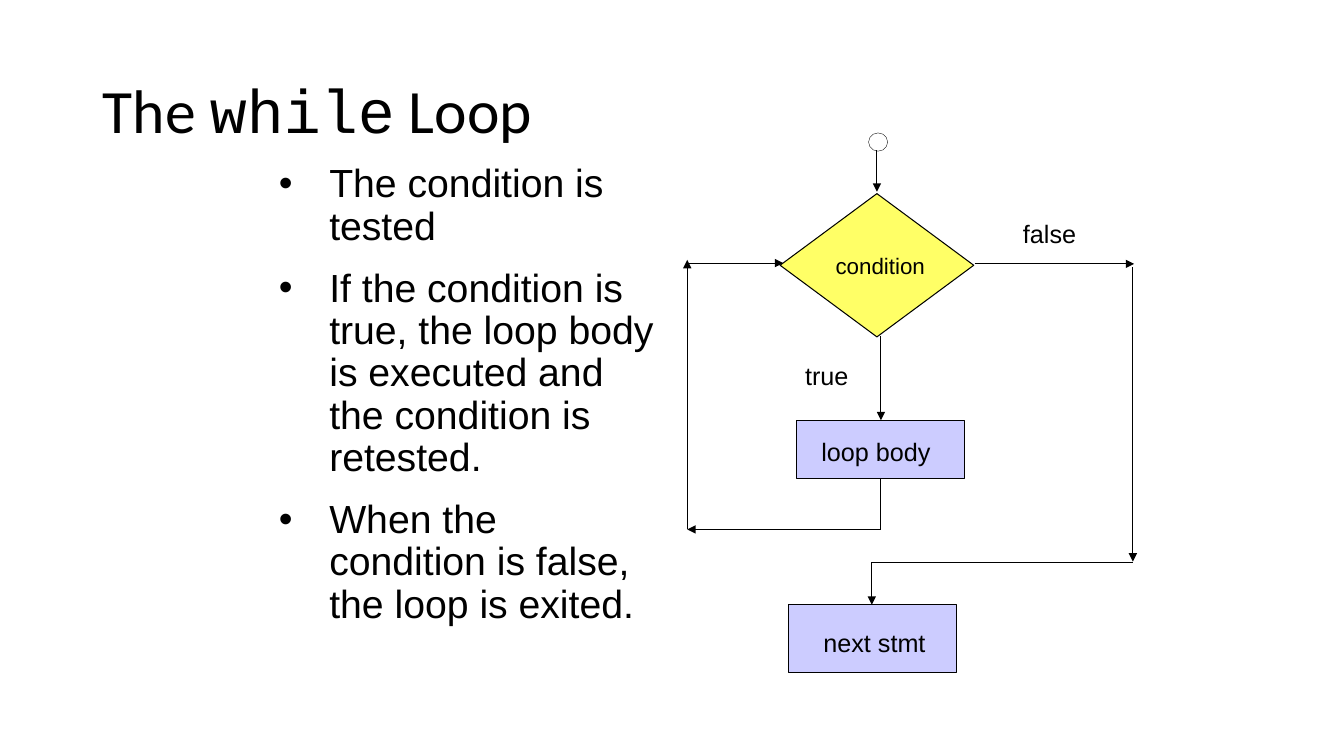
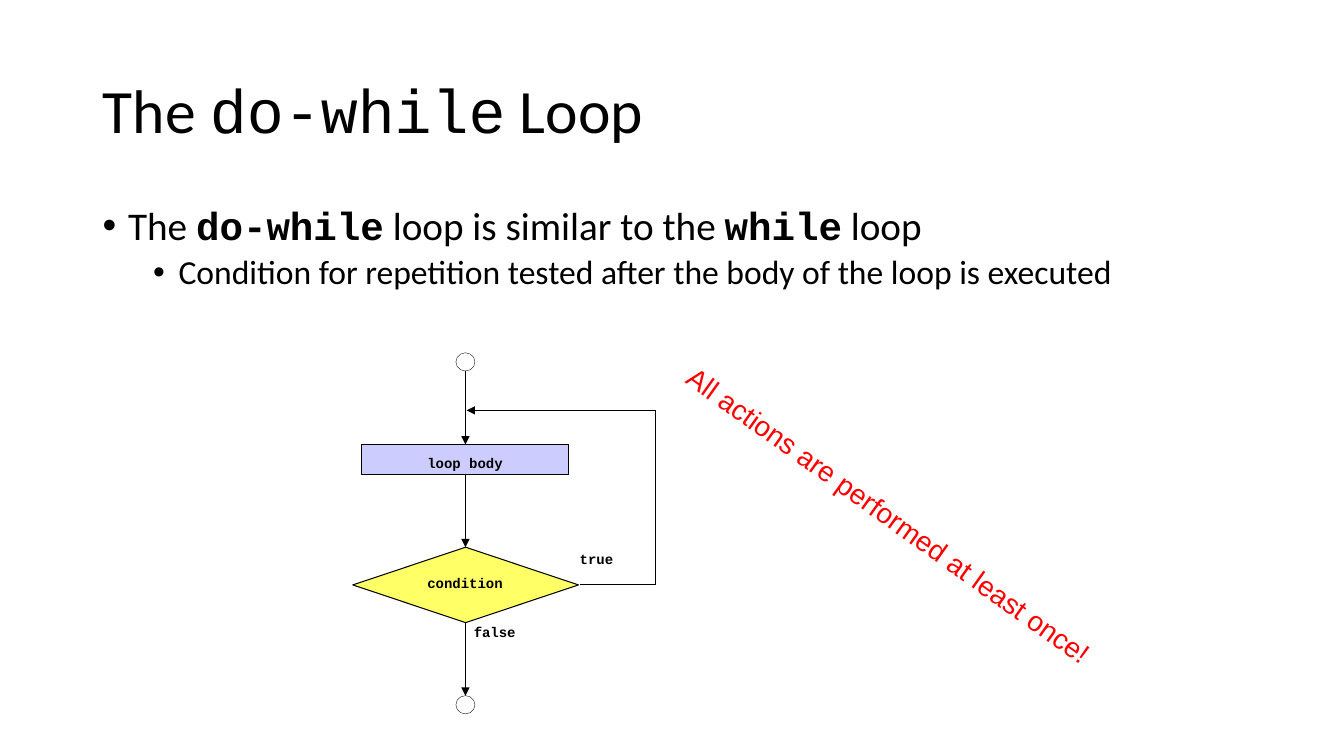
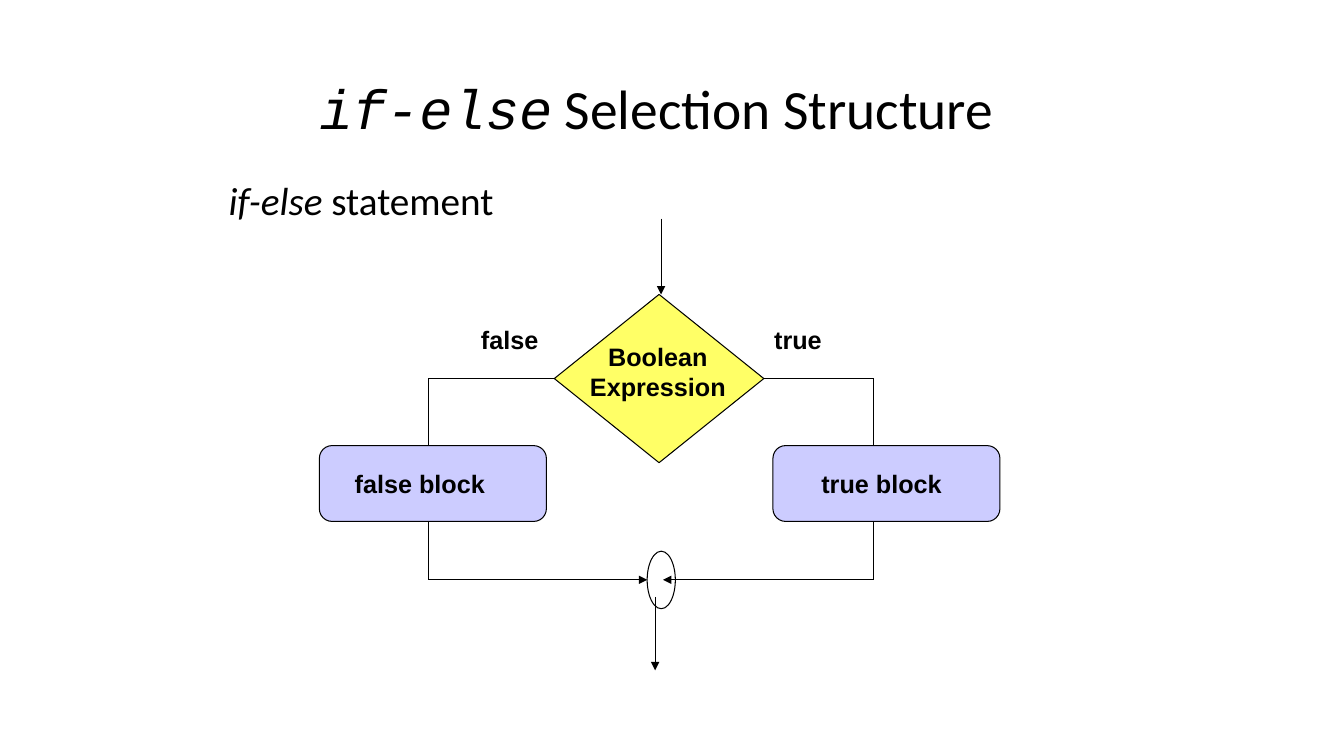
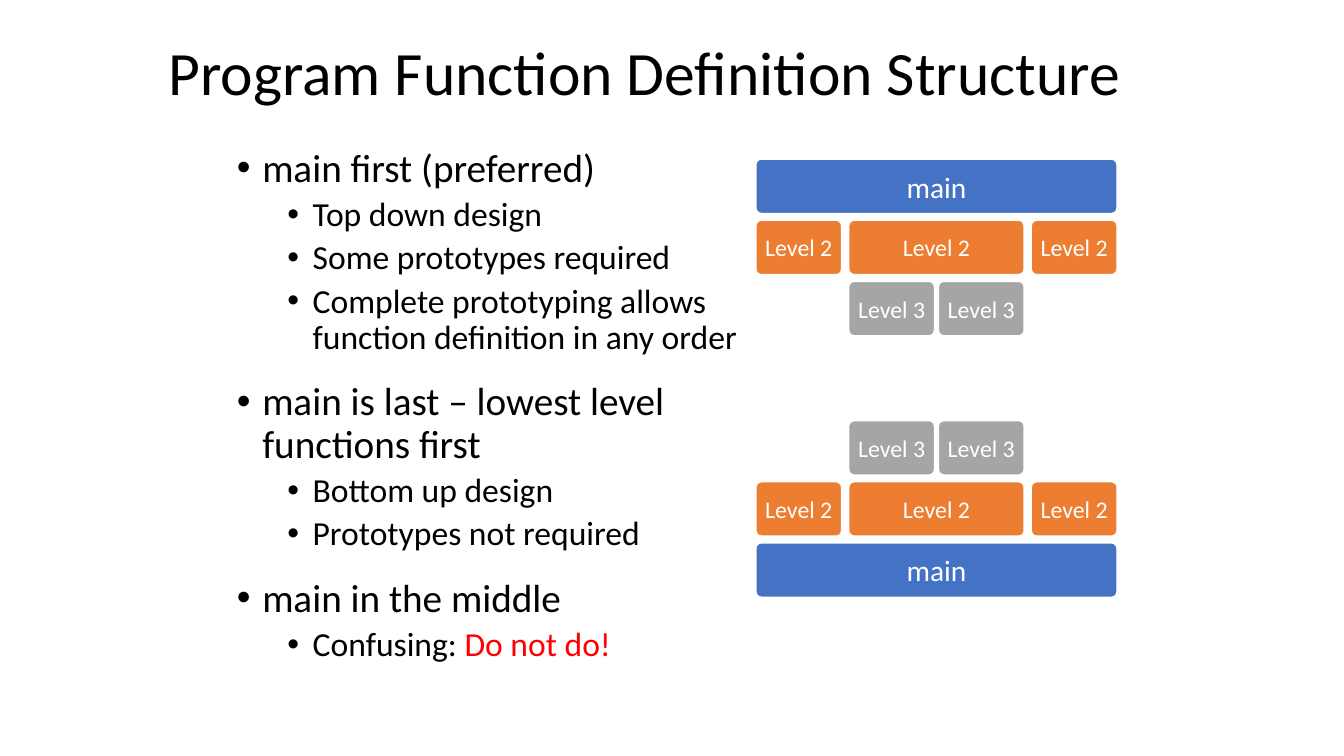
import dataclasses
import itertools

import lxml.etree
import pptx
import pptx.dml.color
import pptx.enum.shapes
import pptx.enum.text
import pptx.oxml.ns
import pptx.util

Cm, Pt = pptx.util.Cm, pptx.util.Pt
Kind = pptx.enum.shapes.MSO_SHAPE
Align = pptx.enum.text.PP_ALIGN
Anchor = pptx.enum.text.MSO_ANCHOR
qn = pptx.oxml.ns.qn


@dataclasses.dataclass(frozen=True)
class Theme:
    ink: str = "000000"
    white: str = "FFFFFF"
    red: str = "FF0000"
    test: str = "FFFF66"
    step: str = "CCCCFF"
    blue: str = "4472C4"
    orange: str = "ED7D31"
    gray: str = "A5A5A5"
    main: str = "Calibri"
    sans: str = "Arial"
    code: str = "Courier New"
    head: float = 44
    lower: float = 39.6
    body: tuple = (28, 24)
    note: float = 20
    label: float = 18
    small: float = 16
    tiny: float = 10
    block: tuple = (21, 17)
    thin: float = 0.25
    line: float = 0.75
    leading: float = 0.9


def tint(color):
    return pptx.dml.color.RGBColor.from_string(color)


class Deck:
    def __init__(self, theme):
        self.theme = theme
        self.show = pptx.Presentation()
        self.show.slide_width, self.show.slide_height = Cm(33.87), Cm(19.05)
        self.page = None

    def font(self, run, face, size, color=None, bold=False, ital=False):
        font = run.font
        font.name, font.size, font.bold, font.italic = face, Pt(size), bold, ital
        font.color.rgb = tint(color or self.theme.ink)

    def runs(self, para, text, mark=None, **style):
        """Parts of the text between backticks get the style in mark as well."""
        for i, part in enumerate(text.split("`")):
            if part:
                run = para.add_run()
                run.text = part
                self.font(run, **{**style, **(mark or {} if i % 2 else {})})

    def slide(self, title, at=(2.34, 1.02, 29.21, 3.68), size=None, mark=None):
        self.page = self.show.slides.add_slide(self.show.slide_layouts[5])
        box = self.page.shapes.title
        box.left, box.top, box.width, box.height = map(Cm, at)
        frame = box.text_frame
        frame.auto_size = pptx.enum.text.MSO_AUTO_SIZE.NONE
        frame.vertical_anchor = Anchor.MIDDLE
        para = frame.paragraphs[0]
        para.alignment, para.line_spacing = Align.LEFT, self.theme.leading
        self.runs(para, title, mark, face=self.theme.main,
                  size=size or self.theme.head)

    def bullets(self, items, at, face=None, inset=0.64, gap=18, mark=None, dot="•"):
        """Each item is a pair of level and text; gap goes above later top items."""
        frame = self.page.shapes.add_textbox(*map(Cm, at)).text_frame
        frame.word_wrap = True
        for i, (level, text) in enumerate(items):
            para = frame.add_paragraph() if i else frame.paragraphs[0]
            para.level, para.line_spacing = level, self.theme.leading
            para.space_before = Pt(5 if level else gap if i else 10)
            self.runs(para, text, mark, face=face or self.theme.main,
                      size=self.theme.body[level])
            if dot:
                props = para._p.get_or_add_pPr()
                props.set("marL", str(Cm(inset + 1.27 * level)))
                props.set("indent", str(-Cm(inset)))
                lxml.etree.SubElement(props, qn("a:buFont"), typeface=self.theme.sans)
                lxml.etree.SubElement(props, qn("a:buChar"), char=dot)

    def label(self, text, at, size=None, face=None, center=False, turn=0, **style):
        box = self.page.shapes.add_textbox(*map(Cm, at))
        box.rotation = turn
        frame = box.text_frame
        frame.word_wrap = True
        self.fill(frame, text, face or self.theme.sans, size or self.theme.label,
                  Align.CENTER if center else Align.LEFT, **style)

    def fill(self, frame, text, face, size, align, **style):
        """Put text without margins in a frame."""
        frame.margin_left = frame.margin_right = 0
        frame.margin_top = frame.margin_bottom = 0
        frame.text = text
        for para in frame.paragraphs:
            para.alignment = align
            for run in para.runs:
                self.font(run, face, size, **style)

    def node(self, kind, at, fill=None, width=None, edge=None, bend=None):
        shape = self.page.shapes.add_shape(kind, *map(Cm, at))
        shape.shadow.inherit = False
        if fill:
            shape.fill.solid()
            shape.fill.fore_color.rgb = tint(fill)
        else:
            shape.fill.background()
        shape.line.color.rgb = tint(edge or self.theme.ink)
        shape.line.width = Pt(width or self.theme.line)
        if bend:
            shape.adjustments[0] = bend
        return shape

    def dot(self, x, y):
        self.node(Kind.OVAL, (x, y, 0.48, 0.46), width=self.theme.thin)

    def route(self, *spots, arrow=True, width=None):
        """Join the spots with straight lines; the arrow sits on the last one."""
        for start, end in itertools.pairwise(spots):
            link = self.page.shapes.add_connector(
                pptx.enum.shapes.MSO_CONNECTOR.STRAIGHT, *map(Cm, start + end))
            link.line.color.rgb = tint(self.theme.ink)
            link.line.width = Pt(width or self.theme.line)
            props = link._element.spPr
            if arrow and end == spots[-1]:
                lxml.etree.SubElement(props.find(qn("a:ln")), qn("a:tailEnd"),
                                      type="triangle")
            lxml.etree.SubElement(props, qn("a:effectLst"))

    def tower(self, top, flip=False):
        """Stack the rows of function blocks, main at the top or at the foot."""
        theme = self.theme
        left, unit, gap, split, high, pitch = 19.05, 2.16, 0.18, 0.1, 1.37, 1.54
        wide = 2 * unit + split
        mid = left + unit + gap
        last = mid + wide + gap
        rows = [
            ("main", theme.blue, theme.block[0], [(left, last + unit - left)]),
            ("Level 2", theme.orange, theme.block[1],
             [(left, unit), (mid, wide), (last, unit)]),
            ("Level 3", theme.gray, theme.block[1],
             [(mid, unit), (mid + unit + split, unit)]),
        ]
        for i, (text, color, size, cells) in enumerate(rows):
            y = top + pitch * (2 - i if flip else i)
            for x, width in cells:
                block = self.node(Kind.ROUNDED_RECTANGLE, (x, y, width, high), color,
                                  width=1, edge=theme.white, bend=0.1)
                frame = block.text_frame
                frame.vertical_anchor = Anchor.MIDDLE
                self.fill(frame, text, theme.main, size, Align.CENTER,
                          color=theme.white)


def loop(deck):
    theme = deck.theme
    deck.slide("The `while` Loop", mark={"face": theme.code})
    deck.bullets([
        (0, "The condition is tested"),
        (0, "If the condition is true, the loop body is executed and "
            "the condition is retested."),
        (0, "When the condition is false, the loop is exited."),
    ], (6.78, 4.01, 10.16, 12.7), face=theme.sans, inset=1.27, gap=14)
    deck.node(Kind.DIAMOND, (19.66, 4.88, 4.88, 3.61), theme.test)
    deck.node(Kind.RECTANGLE, (20.07, 10.59, 4.24, 1.47), theme.step)
    deck.node(Kind.RECTANGLE, (19.86, 15.24, 4.24, 1.7), theme.step)
    deck.dot(21.89, 3.35)
    deck.label("condition", (20.7, 6.35, 2.97, 0.69), theme.small, center=True)
    deck.label("loop body", (20.7, 11, 3.38, 0.76))
    deck.label("false", (25.78, 5.51, 1.5, 0.76))
    deck.label("true", (20.29, 9.09, 1.5, 0.76))
    deck.label("next stmt", (20.75, 15.8, 3, 0.76))
    deck.route((22.1, 3.78), (22.1, 4.83))
    deck.route((22.2, 8.46), (22.2, 10.59))
    deck.route((24.56, 6.65), (28.58, 6.65))
    deck.route((28.55, 6.73), (28.55, 14.15))
    deck.route((22.2, 12.07), (22.2, 13.34), (17.32, 13.34))
    deck.route((17.32, 13.34), (17.32, 6.55))
    deck.route((17.32, 6.63), (19.74, 6.63))
    deck.route((28.55, 14.17), (21.97, 14.17), (21.97, 15.24))


def repeat(deck):
    theme = deck.theme
    deck.slide("The `do-while` Loop", mark={"face": theme.code})
    deck.bullets([
        (0, "The `do-while` loop is similar to the `while` loop"),
        (1, "Condition for repetition tested after the body of the loop is executed"),
    ], (2.34, 5.08, 29.21, 12.09), mark={"face": theme.code, "bold": True})
    axis = 11.73
    for y in (8.89, 17.53):
        deck.dot(axis - 0.24, y)
    for top, end in ((9.35, 11.2), (11.96, 13.79), (15.7, 17.53)):
        deck.route((axis, top), (axis, end), width=theme.thin)
    deck.route((14.61, 14.73), (16.51, 14.73), (16.51, 10.34), (11.76, 10.34),
               width=theme.thin)
    deck.node(Kind.RECTANGLE, (9.12, 11.2, 5.21, 0.76), theme.step)
    deck.node(Kind.DIAMOND, (8.89, 13.79, 5.69, 1.9), theme.test)
    for text, x, y, center in (("true", 14.61, 13.87, False),
                               ("false", 11.94, 15.72, False),
                               ("loop body", 9.83, 11.46, True),
                               ("condition", 9.83, 14.48, True)):
        deck.label(text, (x, y, 3.78, 0.66), theme.tiny, theme.code, center, bold=True)
    deck.label("All actions are performed at least once!", (15.9, 12.55, 13, 0.86),
               theme.note, center=True, turn=35.5, color=theme.red)


def choice(deck):
    theme = deck.theme
    deck.slide("`if-else` Selection Structure", (7.8, 1.91, 19.38, 1.78), theme.lower,
               {"face": theme.code, "ital": True})
    deck.bullets([(0, "`if-else` statement")], (5.51, 4.45, 8.26, 2.54),
                 mark={"ital": True}, dot=None)
    deck.node(Kind.DIAMOND, (13.97, 7.42, 5.28, 4.24), theme.test)
    deck.node(Kind.OVAL, (16.31, 13.89, 0.71, 1.45))
    deck.route((16.66, 5.51), (16.66, 7.42))
    deck.route((16.51, 15.04), (16.51, 16.89))
    for box, tip, turn, join in ((8.05, 13.97, 10.8, 16.31),
                                 (19.48, 19.25, 22.02, 16.71)):
        deck.node(Kind.ROUNDED_RECTANGLE, (box, 11.23, 5.72, 1.91), theme.step,
                  bend=0.167)
        deck.route((tip, 9.53), (turn, 9.53), (turn, 11.23), arrow=False)
        deck.route((turn, 13.13), (turn, 14.61), (join, 14.61))
    for text, x, y in (("false", 12.12, 8.18), ("true", 19.51, 8.18),
                       ("false block", 8.94, 11.81), ("true block", 20.7, 11.81)):
        deck.label(text, (x, y, 3.6, 0.76), bold=True)
    deck.label("Boolean\nExpression", (14.6, 8.59, 3.96, 1.55), center=True, bold=True)


def order(deck):
    deck.slide("Program Function Definition Structure", (3.99, 0.69, 28.04, 2.41))
    deck.bullets([
        (0, "main first (preferred)"),
        (1, "Top down design"),
        (1, "Some prototypes required"),
        (1, "Complete prototyping allows function definition in any order"),
        (0, "main is last – lowest level functions first"),
        (1, "Bottom up design"),
        (1, "Prototypes not required"),
        (0, "main in the middle"),
        (1, "Confusing: `Do not do!`"),
    ], (5.72, 3.61, 13.13, 14.81), mark={"color": deck.theme.red})
    deck.tower(4.01)
    deck.tower(10.6, flip=True)


def main():
    deck = Deck(Theme())
    for draw in (loop, repeat, choice, order):
        draw(deck)
    deck.show.save("out.pptx")


if __name__ == "__main__":
    main()
